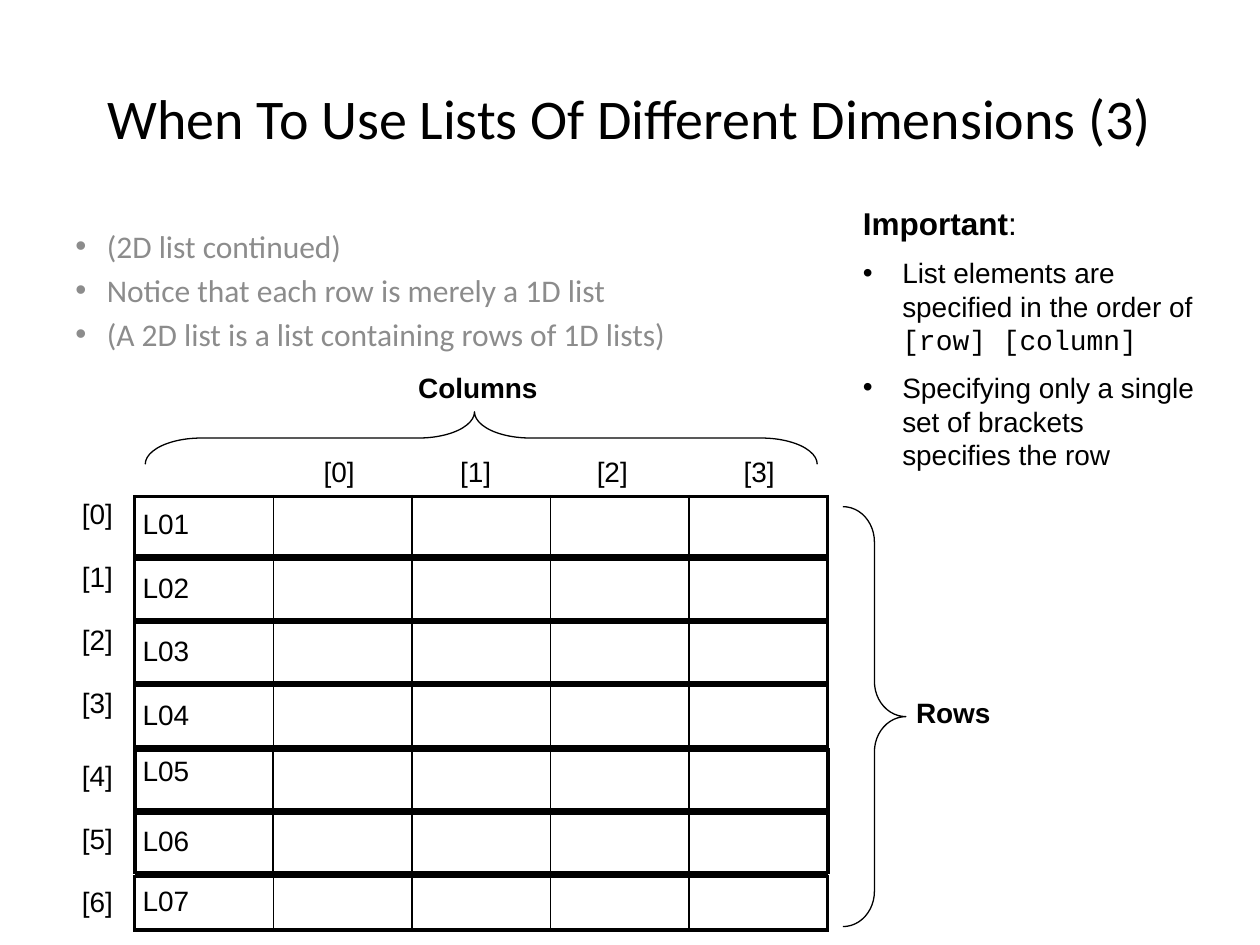
from lxml.etree import SubElement
from pptx import Presentation
from pptx.dml.color import RGBColor
from pptx.enum.shapes import MSO_CONNECTOR, MSO_SHAPE
from pptx.enum.text import MSO_ANCHOR as Anchor, PP_ALIGN as Align
from pptx.oxml.ns import qn
from pptx.util import Pt

BLACK = RGBColor(0, 0, 0)
GREY = RGBColor(0x8C, 0x8C, 0x8C)
GRID_LEFT, GRID_TOP = 77, 283.7
COLUMN_WIDTH, COLUMN_COUNT, ROW_PITCH = 79.2, 5, 36
GRID_RIGHT = GRID_LEFT + COLUMN_COUNT * COLUMN_WIDTH
THIN, EDGE, HEAVY = 1, 2.25, 4
LABEL_GAP = 4.5


def style_run(run, size, font="Arial", color=BLACK, bold=False):
    """Give a run its font, size, colour and weight."""
    run.font.name = font
    run.font.size = Pt(size)
    run.font.color.rgb = color
    run.font.bold = bold


def add_text(slide, box, text, size=16, font="Arial", color=BLACK, bold=False, inset=(0, 0)):
    """Add a wrapped text box with one style and return its frame."""
    frame = slide.shapes.add_textbox(*map(Pt, box)).text_frame
    frame.word_wrap = True
    frame.margin_left = frame.margin_right = Pt(inset[0])
    frame.margin_top = frame.margin_bottom = Pt(inset[1])
    frame.text = text
    for paragraph in frame.paragraphs:
        for run in paragraph.runs:
            style_run(run, size, font, color, bold)
    return frame


def add_bullet(paragraph, indent):
    """Turn a paragraph into a bullet with a hanging indent."""
    properties = paragraph._p.get_or_add_pPr()
    properties.set("marL", str(Pt(indent)))
    properties.set("indent", str(-Pt(indent)))
    SubElement(properties, qn("a:buFont"), typeface="Arial")
    SubElement(properties, qn("a:buChar"), char="•")


def add_line(slide, start, end, weight):
    """Draw a straight black line between two points."""
    line = slide.shapes.add_connector(MSO_CONNECTOR.STRAIGHT, *map(Pt, start + end))
    line.line.color.rgb = BLACK
    line.line.width = Pt(weight)
    SubElement(line._element.spPr, qn("a:effectLst"))


def add_brace(slide, box, adjustments, rotation=0):
    """Draw an outlined right brace."""
    brace = slide.shapes.add_shape(MSO_SHAPE.RIGHT_BRACE, *map(Pt, box))
    brace.shadow.inherit = False
    brace.fill.background()
    brace.line.color.rgb = BLACK
    brace.line.width = Pt(0.75)
    brace.rotation = rotation
    for index, value in enumerate(adjustments):
        brace.adjustments[index] = value


def set_borders(cell, left, right):
    """Give a cell black borders with thick top and bottom edges."""
    properties = cell._tc.get_or_add_tcPr()
    for side, weight in (("L", left), ("R", right), ("T", EDGE), ("B", EDGE)):
        border = SubElement(properties, qn(f"a:ln{side}"), w=str(Pt(weight)))
        fill = SubElement(border, qn("a:solidFill"))
        SubElement(fill, qn("a:srgbClr"), val=str(BLACK))


def add_table_row(slide, top, height, name):
    """Add one lecture row as a one-row table."""
    box = GRID_LEFT, top, GRID_RIGHT - GRID_LEFT, height
    table = slide.shapes.add_table(1, COLUMN_COUNT, *map(Pt, box)).table
    table.first_row = table.horz_banding = False
    for index, cell in enumerate(table.rows[0].cells):
        set_borders(cell, EDGE if index == 0 else THIN,
                    EDGE if index == COLUMN_COUNT - 1 else THIN)
        cell.fill.background()
    lecture = table.cell(0, 0)
    lecture.margin_left = Pt(LABEL_GAP)
    lecture.margin_right = lecture.margin_top = lecture.margin_bottom = 0
    lecture.vertical_anchor = Anchor.MIDDLE
    lecture.text_frame.text = name
    paragraph = lecture.text_frame.paragraphs[0]
    paragraph.line_spacing = 0.9
    style_run(paragraph.runs[0], 16)


def add_drawn_row(slide, top, name, name_top, name_height):
    """Draw one lecture row from lines and a label."""
    bottom = top + ROW_PITCH
    frame = add_text(slide, (GRID_LEFT, name_top, COLUMN_WIDTH, name_height), name)
    frame.margin_left = Pt(LABEL_GAP)
    frame.vertical_anchor = Anchor.MIDDLE
    frame.paragraphs[0].line_spacing = 0.9
    for index in range(COLUMN_COUNT + 1):
        x = GRID_LEFT + index * COLUMN_WIDTH
        add_line(slide, (x, top), (x, bottom), EDGE if index in (0, COLUMN_COUNT) else THIN)
    for y in (top, bottom):
        add_line(slide, (GRID_LEFT, y), (GRID_RIGHT, y), HEAVY)


def add_grid(slide):
    """Add the lecture rows with their row and column indexes."""
    for index, height in enumerate((34, 34.5, 34.5, 36)):
        add_table_row(slide, GRID_TOP + index * ROW_PITCH, height, f"L0{index + 1}")
    add_table_row(slide, 501, 30.5, "L07")
    add_drawn_row(slide, GRID_TOP + 4 * ROW_PITCH, "L05", 427.7, 27.4)
    add_drawn_row(slide, GRID_TOP + 5 * ROW_PITCH, "L06", 469.5, 24)
    for index, left in enumerate((185, 263, 341, 425)):
        add_text(slide, (left, 259.5, 24, 19.4), f"[{index}]")
    for index in range(7):
        top = GRID_TOP + index * ROW_PITCH + (6 if index > 3 else 0)
        add_text(slide, (46.8, top, 24, 19.4), f"[{index}]")


def add_important(slide):
    """Add the note on the order of indexes."""
    frame = add_text(slide, (486, 113, 204, 165),
                     "Important\nList elements are specified in the order of \n"
                     "Specifying only a single set of brackets specifies the row",
                     inset=(7.2, 3.6))
    heading, order, single = frame.paragraphs
    style_run(heading.runs[0], 18, bold=True)
    for paragraph, text, size, font in ((heading, ":", 18, "Arial"),
                                        (order, "[row] [column]", 16, "Courier New")):
        run = paragraph.add_run()
        run.text = text
        style_run(run, size, font)
    for paragraph in (order, single):
        paragraph.space_before = Pt(8)
        add_bullet(paragraph, 22.5)


def main():
    """Build and save the slide."""
    deck = Presentation()
    deck.slide_width, deck.slide_height = Pt(720), Pt(540)
    slide = deck.slides.add_slide(deck.slide_layouts[6])

    title = add_text(slide, (36, 22, 648, 90), "When To Use Lists Of Different Dimensions (3)",
                     32, "Calibri", inset=(7.2, 3.6))
    title.vertical_anchor = Anchor.MIDDLE
    title.paragraphs[0].alignment = Align.CENTER

    points = add_text(slide, (36, 126, 432, 84),
                      "(2D list continued)\nNotice that each row is merely a 1D list\n"
                      "(A 2D list is a list containing rows of 1D lists)",
                      18, "Calibri", GREY, inset=(7.2, 3.6))
    for paragraph in points.paragraphs:
        paragraph.space_before = Pt(3.6)
        add_bullet(paragraph, 18)

    add_grid(slide)
    add_brace(slide, (260, 58.3, 30, 384), (1.07, 0.49), 270)
    add_text(slide, (239, 211.7, 78, 19.4), "Columns", bold=True)
    add_brace(slide, (481.7, 289.5, 36, 240), (0.56, 0.5))
    add_text(slide, (523.5, 397.5, 78, 19.4), "Rows", bold=True)
    add_important(slide)
    deck.save("out.pptx")


if __name__ == "__main__":
    main()
